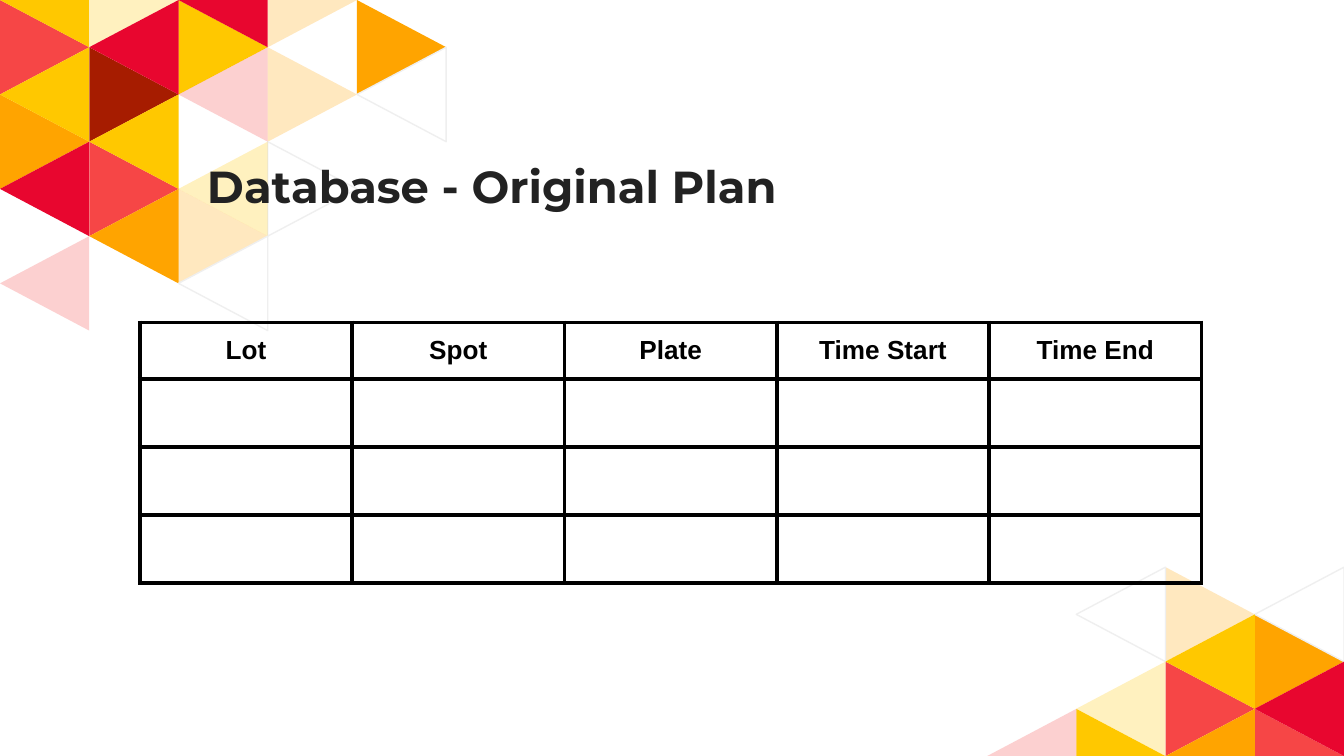
from lxml.etree import SubElement
from pptx import Presentation
from pptx.dml.color import RGBColor
from pptx.enum.text import MSO_ANCHOR, MSO_AUTO_SIZE, PP_ALIGN
from pptx.oxml import parse_xml
from pptx.oxml.ns import nsdecls, qn
from pptx.util import Inches, Pt

AMBER = RGBColor(0xFF, 0xA4, 0x00)
YELLOW = RGBColor(0xFF, 0xC8, 0x00)
CORAL = RGBColor(0xF6, 0x46, 0x46)
RED = RGBColor(0xE8, 0x06, 0x2F)
BROWN = RGBColor(0xA6, 0x1C, 0x00)
WHITE = RGBColor(0xFF, 0xFF, 0xFF)
PALE_GRAY = RGBColor(0xEF, 0xEF, 0xEF)
DARK = RGBColor(0x22, 0x22, 0x22)
BLACK = RGBColor(0x00, 0x00, 0x00)

TRIANGLE_W = 3.32 / 5
HALF_H = 2.46 / 7
FAINT = 25

TOP_LEFT = [
    ("right", 0, 2, AMBER, 100), ("right", 1, 1, BROWN, 100),
    ("right", 1, 3, CORAL, 100), ("right", 3, 1, AMBER, FAINT),
    ("right", 2, 4, AMBER, FAINT), ("right", 3, 3, WHITE, 100),
    ("right", 0, 0, CORAL, 100), ("right", 1, -1, YELLOW, FAINT),
    ("right", 2, 0, YELLOW, 100), ("right", 3, -1, AMBER, FAINT),
    ("right", 4, 0, AMBER, 100), ("left", 0, 1, YELLOW, 100),
    ("left", 1, 2, YELLOW, 100), ("left", 0, 3, RED, 100),
    ("left", 1, 4, AMBER, 100), ("left", 0, 5, CORAL, FAINT),
    ("left", 2, 1, CORAL, FAINT), ("left", 2, 3, YELLOW, FAINT),
    ("left", 2, 5, WHITE, 100), ("left", 4, 1, WHITE, 100),
    ("left", 0, -1, YELLOW, 100), ("left", 1, 0, RED, 100),
    ("left", 2, -1, RED, 100),
]
BOTTOM_RIGHT = [
    ("right", 2, 0, AMBER, FAINT), ("right", 3, 1, AMBER, 100),
    ("right", 1, 3, YELLOW, 100), ("right", 2, 2, CORAL, 100),
    ("right", 3, 3, CORAL, 100), ("left", 1, 0, WHITE, 100),
    ("left", 3, 0, WHITE, 100), ("left", 2, 1, YELLOW, 100),
    ("left", 1, 2, YELLOW, FAINT), ("left", 2, 3, AMBER, 100),
    ("left", 3, 2, RED, 100), ("left", 0, 3, CORAL, FAINT),
]
HEADERS = ["Lot", "Spot", "Plate", "Time Start", "Time End"]


def set_attrs(obj, formats):
    for name, value in formats.items():
        setattr(obj, name, value)


def style_run(r, font, size, color):
    set_attrs(r.font, {"name": font, "size": Pt(size), "bold": True})
    r.font.color.rgb = color


def add_triangle(s, origin, rows, direction, col, row, color, opacity):
    base, tip = (col, col + 1) if direction == "right" else (col + 1, col)
    corners = [(base, row), (base, row + 2), (tip, row + 1)]
    points = [
        (Inches(origin[0] + x * TRIANGLE_W),
         Inches(origin[1] + min(max(y, 0), rows) * HALF_H))
        for x, y in corners
    ]
    builder = s.shapes.build_freeform(*points[0])
    builder.add_line_segments(points[1:], close=True)
    sp = builder.convert_to_shape()
    sp.shadow.inherit = False
    sp.fill.solid()
    sp.fill.fore_color.rgb = color
    if opacity < 100:
        clr = sp.fill._xPr.find(qn("a:solidFill"))[0]
        SubElement(clr, qn("a:alpha"), val=str(opacity * 1000))
    if color == WHITE:
        sp.line.color.rgb = PALE_GRAY
        sp.line.width = Pt(0.75)
    else:
        sp.line.fill.background()


def add_mosaic(s, origin, rows, triangles):
    for triangle in triangles:
        add_triangle(s, origin, rows, *triangle)


def add_title(s, text):
    sp = s.shapes.title
    set_attrs(sp, {"left": Inches(1.44), "top": Inches(0.95),
                   "width": Inches(7.06), "height": Inches(0.73)})
    tf = sp.text_frame
    set_attrs(tf, {"word_wrap": True, "auto_size": MSO_AUTO_SIZE.NONE,
                   "vertical_anchor": MSO_ANCHOR.BOTTOM,
                   "margin_left": Inches(0.1), "margin_right": Inches(0.1),
                   "margin_top": Inches(0.1), "margin_bottom": Inches(0.1)})
    p = tf.paragraphs[0]
    p.alignment = PP_ALIGN.LEFT
    r = p.add_run()
    r.text = text
    style_run(r, "Montserrat", 24, DARK)
    s.shapes._spTree.append(sp._element)


def format_cell(cell):
    set_attrs(cell, {"margin_left": Inches(0.1), "margin_right": Inches(0.1),
                     "margin_top": Inches(0.1), "margin_bottom": Inches(0.1)})
    cell.fill.background()
    tcPr = cell._tc.get_or_add_tcPr()
    for i, side in enumerate("LRTB"):
        tcPr.insert(i, parse_xml(
            f'<a:ln{side} {nsdecls("a")} w="{Pt(2.25)}"><a:solidFill>'
            f'<a:srgbClr val="{BLACK}"/></a:solidFill></a:ln{side}>'))


def add_plan_table(s):
    heights = [0.42, 0.48, 0.48, 0.48]
    table = s.shapes.add_table(
        len(heights), len(HEADERS), Inches(1.04), Inches(2.4),
        Inches(1.58 * len(HEADERS)), Inches(sum(heights))).table
    set_attrs(table, {"first_row": False, "horz_banding": False})
    for column in table.columns:
        column.width = Inches(1.58)
    for row, height in zip(table.rows, heights):
        row.height = Inches(height)
    for cell in table.iter_cells():
        format_cell(cell)
    for col, text in enumerate(HEADERS):
        p = table.cell(0, col).text_frame.paragraphs[0]
        p.alignment = PP_ALIGN.CENTER
        r = p.add_run()
        r.text = text
        style_run(r, "Arial", 14, BLACK)


def main():
    prs = Presentation()
    set_attrs(prs, {"slide_width": Inches(10), "slide_height": Inches(5.625)})
    s = prs.slides.add_slide(prs.slide_layouts[5])
    add_mosaic(s, (10 - 4 * TRIANGLE_W, 4.22), 4, BOTTOM_RIGHT)
    add_mosaic(s, (0, 0), 7, TOP_LEFT)
    add_title(s, "Database - Original Plan")
    add_plan_table(s)
    prs.save("out.pptx")


if __name__ == "__main__":
    main()
